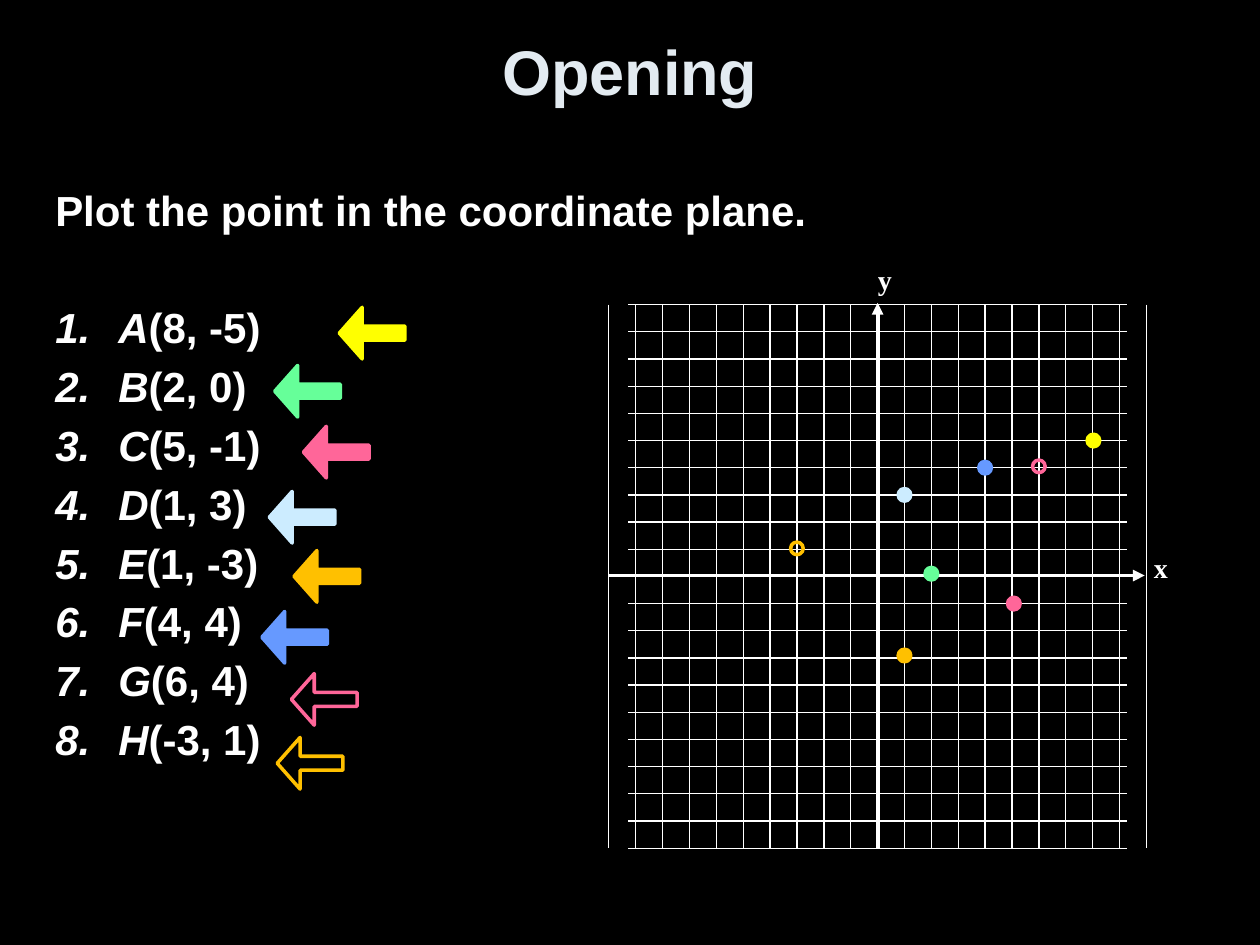
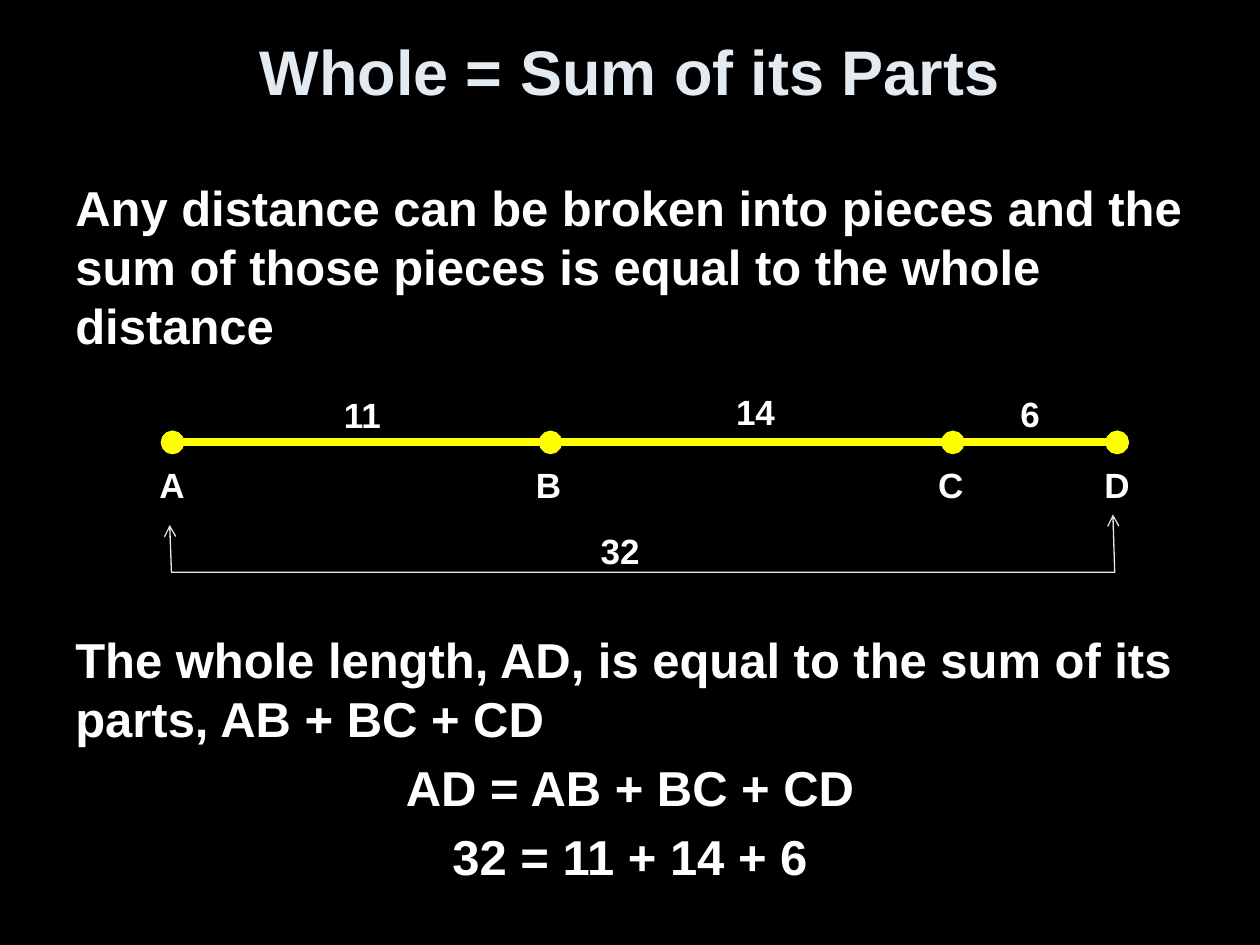
"""Builds two geometry slides: plotting points, and a whole as the sum of its parts."""
from dataclasses import dataclass

from lxml import etree
from pptx import Presentation
from pptx import util as u
from pptx.dml.color import RGBColor
from pptx.enum import shapes, text
from pptx.oxml import ns

Pt = u.Pt


@dataclass(frozen=True)
class Theme:
    black: str = "000000"
    white: str = "FFFFFF"
    pale: str = "E3EBF1"
    yellow: str = "FFFF00"
    green: str = "66FF99"
    pink: str = "FF6699"
    ice: str = "CCECFF"
    amber: str = "FFC000"
    blue: str = "6699FF"
    sans: str = "Arial"
    serif: str = "Times New Roman"
    title_size: float = 36
    statement_size: float = 28
    list_size: float = 24
    label_size: float = 20
    axis_size: float = 16
    thin: float = 0.75
    marker: float = 2
    axis: float = 2.25
    thick: float = 4.5


class SlideBuilder:
    def __init__(self, theme):
        self.theme = theme
        self.deck = Presentation()
        self.deck.slide_width, self.deck.slide_height = Pt(720), Pt(540)
        self.slide = None

    def page(self, title):
        self.slide = self.deck.slides.add_slide(self.deck.slide_layouts[6])
        fill = self.slide.background.fill
        fill.solid()
        fill.fore_color.rgb = RGBColor.from_string(self.theme.black)
        box = self.text_box(36, 6, 648, 68, vertical_anchor=text.MSO_ANCHOR.MIDDLE)
        self.paragraph(box, [(title, {})], self.theme.title_size,
                       color=self.theme.pale, alignment=text.PP_ALIGN.CENTER)

    def text_box(self, left, top, width, height, **frame_format):
        box = self.slide.shapes.add_textbox(Pt(left), Pt(top), Pt(width), Pt(height))
        for name, value in {"word_wrap": True, **frame_format}.items():
            setattr(box.text_frame, name, value)
        return box

    def paragraph(self, box, spans, size, color=None, font=None, numbered=False, **para_format):
        frame = box.text_frame
        para = frame.paragraphs[0] if not frame.text else frame.add_paragraph()
        if numbered:
            properties = para._p.get_or_add_pPr()
            properties.set("marL", str(Pt(36)))
            properties.set("indent", str(-Pt(36)))
            etree.SubElement(properties, ns.qn("a:buAutoNum"), type="arabicPeriod")
        for name, value in para_format.items():
            setattr(para, name, value)
        for words, span_format in spans:
            span = para.add_run()
            span.text = words
            base = {"name": font or self.theme.sans, "size": Pt(size), "bold": True}
            for name, value in {**base, **span_format}.items():
                setattr(span.font, name, value)
            span.font.color.rgb = RGBColor.from_string(color or self.theme.white)

    def label(self, words, left, top, size=None, font=None):
        box = self.text_box(left, top, 37, 32, margin_right=0)
        self.paragraph(box, [(words, {})], size or self.theme.label_size, font=font)

    def outline(self, shape, color, weight, head=None, tail=None):
        shape.line.color.rgb = RGBColor.from_string(color)
        shape.line.width = Pt(weight)
        line = shape.element.spPr.find(ns.qn("a:ln"))
        for tag, kind in (("a:headEnd", head), ("a:tailEnd", tail)):
            if kind:
                etree.SubElement(line, ns.qn(tag), type=kind)

    def line(self, start, end, color, weight, **ends):
        connector = self.slide.shapes.add_connector(
            shapes.MSO_CONNECTOR.STRAIGHT, *(Pt(value) for value in (*start, *end)))
        self.outline(connector, color, weight, **ends)
        etree.SubElement(connector.element.spPr, ns.qn("a:effectLst"))

    def shape(self, kind, left, top, width, height, color, filled=True, adjustments=()):
        shape = self.slide.shapes.add_shape(kind, Pt(left), Pt(top), Pt(width), Pt(height))
        shape.shadow.inherit = False
        for index, value in enumerate(adjustments):
            shape.adjustments[index] = value
        if filled:
            shape.fill.solid()
            shape.fill.fore_color.rgb = RGBColor.from_string(color)
        else:
            shape.fill.background()
        self.outline(shape, color, self.theme.marker)

    def open_path(self, points, color, weight, **ends):
        builder = self.slide.shapes.build_freeform(*points[0], scale=Pt(1))
        builder.add_line_segments(points[1:], close=False)
        shape = builder.convert_to_shape()
        shape.shadow.inherit = False
        shape.fill.background()
        self.outline(shape, color, weight, **ends)


def draw_plane(slides, left, top, step_x, step_y, cells):
    theme = slides.theme
    right, bottom = left + cells * step_x, top + cells * step_y
    center_x, center_y = (left + right) / 2, (top + bottom) / 2
    row_inset = 11.2
    for index in range(cells + 1):
        x, y = left + index * step_x, top + index * step_y
        slides.line((left + row_inset, y), (right - row_inset, y), theme.white, theme.thin)
        slides.line((x, top), (x, bottom), theme.white, theme.thin)
    axis_y = center_y - 0.5
    slides.line((center_x, bottom), (center_x, top - 1), theme.white, theme.axis, tail="triangle")
    slides.line((left, axis_y), (right - 1, axis_y), theme.white, theme.axis, tail="triangle")
    slides.label("y", 494.6, 146.2, theme.axis_size, theme.serif)
    slides.label("x", 652.3, 311.3, theme.axis_size, theme.serif)
    return lambda x, y: (center_x + x * step_x, center_y - y * step_y)


def opening_slide(slides):
    theme = slides.theme
    slides.page("Opening")
    to_page = draw_plane(slides, left=347.9, top=174.1, step_x=15.36, step_y=15.53, cells=20)
    plotted_points = [
        ("A", "(8, -5)", (8.03, 5), (193.9, 175.6), theme.yellow, True),
        ("B", "(2, 0)", (2, 0.1), (157, 208.8), theme.green, True),
        ("C", "(5, -1)", (5.07, -1), (173.4, 243.6), theme.pink, True),
        ("D", "(1, 3)", (1, 3), (153.9, 280.8), theme.ice, True),
        ("E", "(1, -3)", (1, -2.91), (168, 314.6), theme.amber, True),
        ("F", "(4, 4)", (4, 4), (149.6, 349.4), theme.blue, True),
        ("G", "(6, 4)", (6, 4.05), (166.5, 384.9), theme.pink, False),
        ("H", "(-3, 1)", (-3, 1.03), (158.4, 421.4), theme.amber, False),
    ]
    box = slides.text_box(24.5, 102.2, 671, 380)
    slides.paragraph(box, [("Plot the point in the coordinate plane.", {})], theme.list_size)
    dot = 7.2
    for index, (name, pair, place, arrow, color, filled) in enumerate(plotted_points):
        slides.paragraph(box, [(name, {"italic": True}), (pair, {"italic": False})],
                         theme.list_size, numbered=True,
                         space_before=Pt(theme.list_size / 5 if index else 38))
        x, y = to_page(*place)
        slides.shape(shapes.MSO_SHAPE.OVAL, x - dot / 2, y - dot / 2, dot, dot, color, filled)
        slides.shape(shapes.MSO_SHAPE.LEFT_ARROW, *arrow, 37.5, 29.5, color, filled,
                     adjustments=(0.271, 0.443))


def parts_slide(slides):
    theme = slides.theme
    size = theme.statement_size
    slides.page("Whole = Sum of its Parts")
    box = slides.text_box(36, 98, 648, 126.7)
    slides.paragraph(box, [("Any distance can be broken into pieces and the sum of those "
                            "pieces is equal to the whole distance", {})], size)

    stops = {"A": (98.6, 84), "B": (314.6, 299.1), "C": (544.5, 529), "D": (638.4, 624)}
    segment_y = 252.8
    for start, end in ("AD", "AB", "CD"):
        slides.line((stops[start][0], segment_y), (stops[end][0], segment_y), theme.yellow,
                    theme.thick, head="oval", tail="oval")
    for name, (_, label_left) in stops.items():
        slides.label(name, label_left, 261.4)
    for length, left, top in (("11", 189.4, 221.4), ("14", 413.5, 219.6),
                              ("6", 576, 220.7), ("32", 336.2, 298.8)):
        slides.label(length, left, top)
    slides.open_path([(97, 300.2), (97.8, 326.7), (637, 327.4), (635.8, 293.6)],
                     theme.pale, theme.thin, head="arrow", tail="arrow")

    box = slides.text_box(36, 356.4, 648, 165.6)
    slides.paragraph(box, [("The whole length, AD, is equal to the sum of its parts, "
                            "AB + BC + CD", {})], size)
    for equation in ("AD = AB + BC + CD", "32 = 11 + 14 + 6"):
        slides.paragraph(box, [(equation, {})], size, alignment=text.PP_ALIGN.CENTER,
                         space_before=Pt(size / 5))


def main():
    slides = SlideBuilder(Theme())
    opening_slide(slides)
    parts_slide(slides)
    slides.deck.save("out.pptx")


if __name__ == "__main__":
    main()
